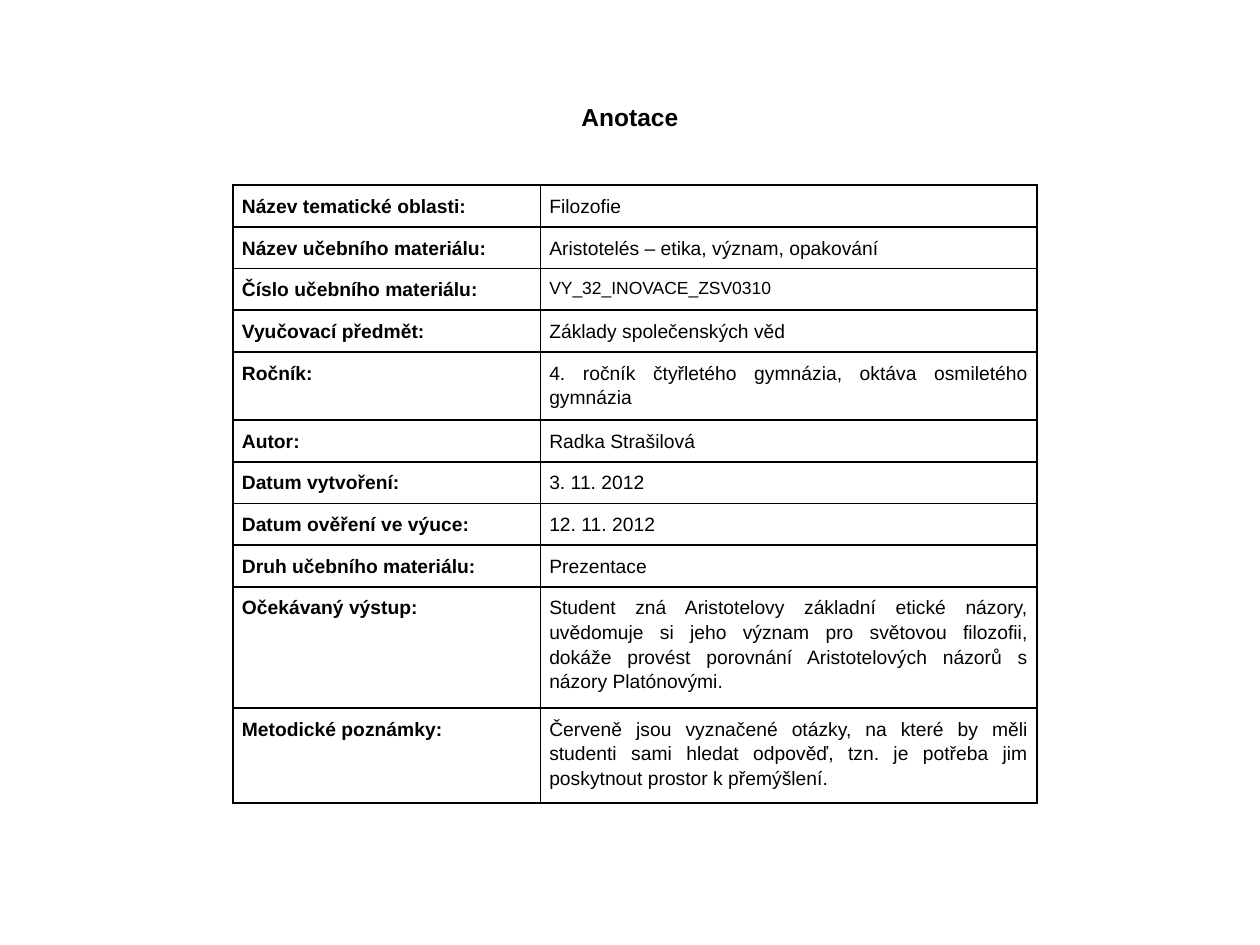
from dataclasses import dataclass

from lxml import etree
from pptx import Presentation
from pptx.dml.color import RGBColor
from pptx.enum.text import MSO_ANCHOR, MSO_AUTO_SIZE, PP_ALIGN
from pptx.oxml.ns import qn
from pptx.util import Inches, Pt

LEFT, CENTER, JUST = PP_ALIGN.LEFT, PP_ALIGN.CENTER, PP_ALIGN.JUSTIFY
TOP, MIDDLE = MSO_ANCHOR.TOP, MSO_ANCHOR.MIDDLE
GROW = MSO_AUTO_SIZE.SHAPE_TO_FIT_TEXT


@dataclass(frozen=True)
class Theme:
    font: str = "Arial"
    ink: str = "000000"
    title: int = 14
    body: int = 11
    code: int = 10
    line: int = 1
    space: float = 1.15


THEME = Theme()
SPLIT = 2.44 / 6.38
ROW = 0.33
ROWS = [
    ("Název tematické oblasti:", "Filozofie", ROW, THEME.body),
    ("Název učebního materiálu:", "Aristotelés – etika, význam, opakování", ROW, THEME.body),
    ("Číslo učebního materiálu:", "VY_32_INOVACE_ZSV0310", ROW, THEME.code),
    ("Vyučovací předmět:", "Základy společenských věd", ROW, THEME.body),
    ("Ročník:", "4. ročník čtyřletého gymnázia, oktáva osmiletého gymnázia", 0.54, THEME.body),
    ("Autor:", "Radka Strašilová", ROW, THEME.body),
    ("Datum vytvoření:", "3. 11. 2012", ROW, THEME.body),
    ("Datum ověření ve výuce:", "12. 11. 2012", ROW, THEME.body),
    ("Druh učebního materiálu:", "Prezentace", ROW, THEME.body),
    ("Očekávaný výstup:",
     "Student zná Aristotelovy základní etické názory, uvědomuje si jeho význam "
     "pro světovou filozofii, dokáže provést porovnání Aristotelových názorů "
     "s názory Platónovými.", 0.96, THEME.body),
    ("Metodické poznámky:",
     "Červeně jsou vyznačené otázky, na které by měli studenti sami hledat odpověď, "
     "tzn. je potřeba jim poskytnout prostor k přemýšlení.", 0.75, THEME.body),
]


def set_text(frame, text, size, bold, align):
    para = frame.paragraphs[0]
    para.text = text
    para.alignment = align
    font = para.font
    font.name, font.size, font.bold = THEME.font, Pt(size), bold
    font.color.rgb = RGBColor.from_string(THEME.ink)
    return para


def add_edges(cell):
    props = cell._tc.get_or_add_tcPr()
    for tag in ("a:lnL", "a:lnR", "a:lnT", "a:lnB"):
        edge = etree.SubElement(props, qn(tag), w=str(Pt(THEME.line)))
        fill = etree.SubElement(edge, qn("a:solidFill"))
        etree.SubElement(fill, qn("a:srgbClr"), val=THEME.ink)


def fill_cell(cell, text, size, bold, align):
    cell.margin_left = cell.margin_right = Inches(0.07)
    cell.margin_top = cell.margin_bottom = Inches(0.06)
    cell.vertical_anchor = TOP
    add_edges(cell)
    cell.fill.background()
    para = set_text(cell.text_frame, text, size, bold, align)
    para.line_spacing = THEME.space


def add_title(slide, left, top, width, height):
    box = slide.shapes.add_textbox(Inches(left), Inches(top), Inches(width), Inches(height))
    frame = box.text_frame
    frame.word_wrap = False
    frame.auto_size = GROW
    frame.vertical_anchor = MIDDLE
    set_text(frame, "Anotace", THEME.title, True, CENTER)


def add_facts(slide, left, top, width, height):
    table = slide.shapes.add_table(
        len(ROWS), 2, Inches(left), Inches(top), Inches(width), Inches(height)).table
    table.first_row = table.horz_banding = False
    table.columns[0].width = Inches(width * SPLIT)
    table.columns[1].width = Inches(width * (1 - SPLIT))
    for row, (label, value, tall, size) in zip(table.rows, ROWS):
        row.height = Inches(tall)
        fill_cell(row.cells[0], label, THEME.body, True, LEFT)
        fill_cell(row.cells[1], value, size, False, JUST)


def main():
    deck = Presentation()
    deck.slide_width, deck.slide_height = Inches(10), Inches(7.5)
    slide = deck.slides.add_slide(deck.slide_layouts[6])
    add_title(slide, 0, 0.68, 10, 0.5)
    add_facts(slide, 1.85, 1.47, 6.38, sum(row[2] for row in ROWS))
    deck.save("out.pptx")


if __name__ == "__main__":
    main()
